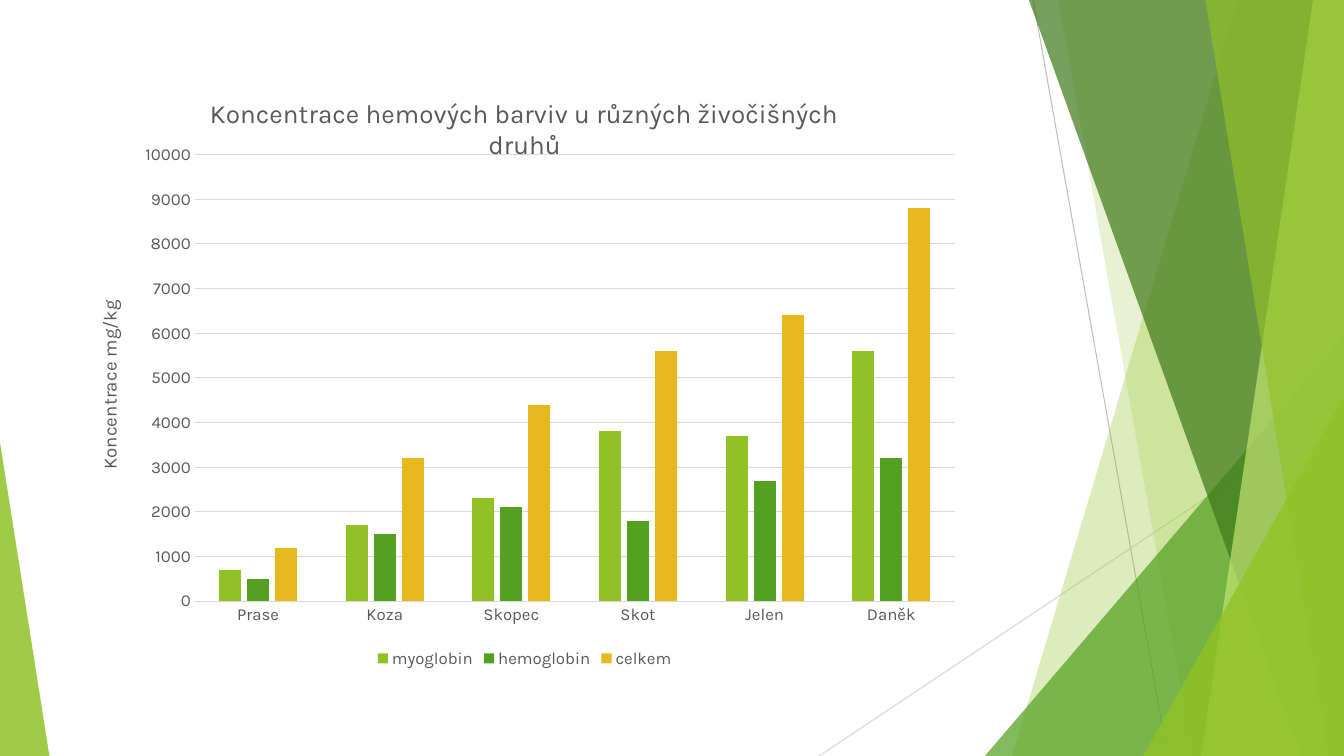
from dataclasses import dataclass

from pptx import Presentation
from pptx.chart.data import CategoryChartData
from pptx.dml.color import RGBColor
from pptx.enum.chart import XL_CHART_TYPE, XL_LEGEND_POSITION, XL_TICK_MARK
from pptx.enum.shapes import MSO_CONNECTOR, MSO_SHAPE
from pptx.oxml import parse_xml
from pptx.oxml.ns import nsdecls, qn
from pptx.oxml.xmlchemy import OxmlElement
from pptx.util import Pt

COLUMNS = XL_CHART_TYPE.COLUMN_CLUSTERED
BOTTOM = XL_LEGEND_POSITION.BOTTOM
NO_TICK = XL_TICK_MARK.NONE
STRAIGHT = MSO_CONNECTOR.STRAIGHT
TRIANGLE = MSO_SHAPE.ISOSCELES_TRIANGLE


@dataclass(frozen=True)
class Theme:
    font: str = "Karla"
    text: str = "595959"
    grid: str = "D9D9D9"
    grey: str = "BFBFBF"
    lime: str = "90C226"
    green: str = "54A021"
    dark: str = "3F7819"
    pale: str = "C0E474"
    gold: str = "E6B91E"
    title: float = 18.6
    axis: float = 13.3
    body: float = 12
    hair: float = 0.75


THEME = Theme()
WIDE, HIGH = 960, 540

ANIMALS = ("Prase", "Koza", "Skopec", "Skot", "Jelen", "Daněk")
PIGMENTS = (
    ("myoglobin", (700, 1700, 2300, 3800, 3700, 5600), THEME.lime),
    ("hemoglobin", (500, 1500, 2100, 1800, 2700, 3200), THEME.green),
    ("celkem", (1200, 3200, 4400, 5600, 6400, 8800), THEME.gold),
)


def style(font, size):
    font.name = THEME.font
    font.size = Pt(size)
    font.bold = False
    font.color.rgb = RGBColor.from_string(THEME.text)


def write(frame, text, size):
    frame.text = text
    style(frame.paragraphs[0].runs[0].font, size)


def stroke(line, color):
    line.width = Pt(THEME.hair)
    line.color.rgb = RGBColor.from_string(color)


def paint(shape, color, alpha):
    """Fill a borderless shape; alpha is its opacity in percent."""
    shape.shadow.inherit = False
    shape.line.fill.background()
    shape.fill.solid()
    shape.fill.fore_color.rgb = RGBColor.from_string(color)
    node = OxmlElement("a:alpha")
    node.set("val", str(alpha * 1000))
    shape.element.spPr.find(".//" + qn("a:srgbClr")).append(node)


def add_line(slide, start, end, color):
    line = slide.shapes.add_connector(STRAIGHT, *map(Pt, start + end))
    stroke(line.line, color)
    line.element.spPr.append(OxmlElement("a:effectLst"))


def add_wedge(slide, box, peak, color, alpha):
    """Triangle whose apex lies at the share peak of its width."""
    wedge = slide.shapes.add_shape(TRIANGLE, *map(Pt, box))
    wedge.adjustments[0] = peak
    paint(wedge, color, alpha)


def add_facets(slide, left, top, width, height):
    """Overlapping bands and wedges that all reach the right edge."""
    right, base = left + width, top + height

    def band(high, low, color, alpha):
        pen = slide.shapes.build_freeform(Pt(left + high), Pt(top))
        corners = ((right, top), (right, base), (left + low, base))
        pen.add_line_segments([(Pt(x), Pt(y)) for x, y in corners])
        paint(pen.convert_to_shape(), color, alpha)

    def wedge(x, y, color, alpha):
        add_wedge(slide, (left + x, top + y, width - x, height - y),
                  1, color, alpha)

    add_line(slide, (left + 153, top), (left + 249, base), THEME.grey)
    add_line(slide, (right, top + 290), (left, base), THEME.grid)
    band(299, 138, THEME.lime, 30)
    band(171, 267, THEME.lime, 20)
    wedge(118.5, 240, THEME.green, 72)
    band(150, 344.5, THEME.dark, 70)
    band(353, 273, THEME.pale, 70)
    band(276, 364, THEME.lime, 65)
    wedge(231.5, 283, THEME.lime, 80)


def set_plot(chart, **shares):
    """Place the inner plot area by shares of the chart's size."""
    area = chart.element.find(".//" + qn("c:plotArea"))
    for old in area.findall(qn("c:layout")):
        area.remove(old)
    parts = "".join(f'<c:{k} val="{v}"/>' for k, v in shares.items())
    area.insert(0, parse_xml(
        f'<c:layout {nsdecls("c")}><c:manualLayout>'
        '<c:layoutTarget val="inner"/>'
        '<c:xMode val="edge"/><c:yMode val="edge"/>'
        f'{parts}</c:manualLayout></c:layout>'))


def style_axes(chart):
    cats, vals = chart.category_axis, chart.value_axis
    for axis in (cats, vals):
        axis.major_tick_mark = axis.minor_tick_mark = NO_TICK
        style(axis.tick_labels.font, THEME.body)
    stroke(cats.format.line, THEME.grid)
    vals.format.line.fill.background()
    stroke(vals.major_gridlines.format.line, THEME.grid)
    vals.minimum_scale, vals.maximum_scale = 0, 10000
    vals.major_unit = 1000
    write(vals.axis_title.text_frame, "Koncentrace mg/kg", THEME.axis)
    body = vals.axis_title.element.find(".//" + qn("a:bodyPr"))
    body.set("rot", "-5400000")
    body.set("vert", "horz")


def add_graph(slide, *box):
    data = CategoryChartData()
    data.categories = ANIMALS
    for name, values, _ in PIGMENTS:
        data.add_series(name, values)
    chart = slide.shapes.add_chart(COLUMNS, *map(Pt, box), data).chart
    style(chart.font, THEME.body)
    write(chart.chart_title.text_frame,
          "Koncentrace hemových barviv u různých živočišných druhů",
          THEME.title)
    chart.chart_title.include_in_layout = False
    chart.has_legend = True
    chart.legend.position = BOTTOM
    chart.legend.include_in_layout = False
    style(chart.legend.font, THEME.body)
    plot = chart.plots[0]
    plot.gap_width, plot.overlap = 219, -27
    plot.vary_by_categories = False
    for series, (_, _, color) in zip(plot.series, PIGMENTS):
        series.format.fill.solid()
        series.format.fill.fore_color.rgb = RGBColor.from_string(color)
    style_axes(chart)
    set_plot(chart, x=0.132, y=0.134, w=0.848, h=0.747)


def main():
    deck = Presentation()
    deck.slide_width, deck.slide_height = Pt(WIDE), Pt(HIGH)
    slide = deck.slides.add_slide(deck.slide_layouts.get_by_name("Blank"))
    add_facets(slide, 585, 0, 375, HIGH)
    add_wedge(slide, (0, 316, 35.3, 224), 0, THEME.lime, 85)
    add_graph(slide, 54.7, 53.3, 640, 427)
    deck.save("out.pptx")


if __name__ == "__main__":
    main()
